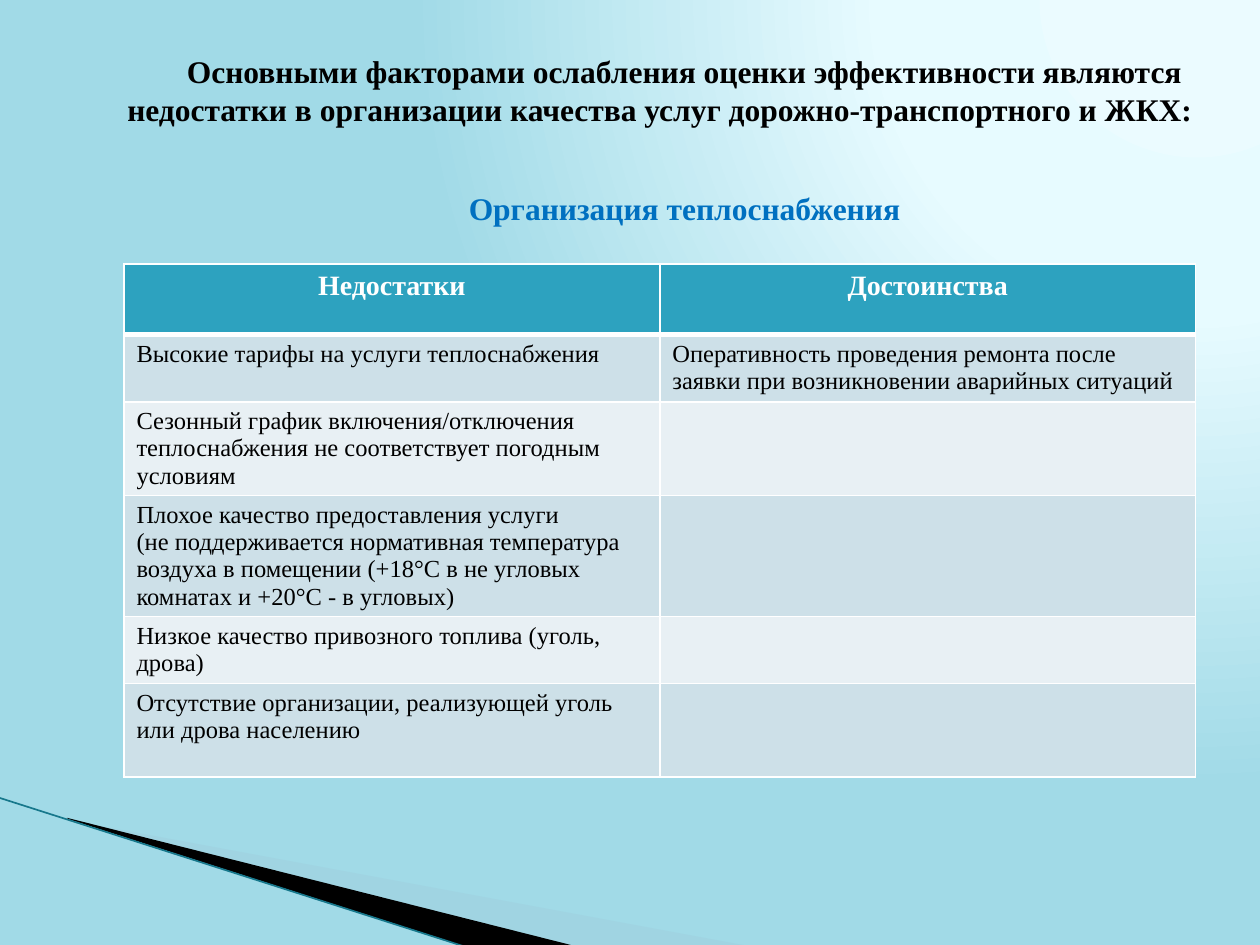
from lxml import etree
from pptx import Presentation
from pptx.dml.color import RGBColor
from pptx.enum.shapes import MSO_CONNECTOR
from pptx.enum.text import MSO_ANCHOR, MSO_AUTO_SIZE, PP_ALIGN
from pptx.oxml import parse_xml
from pptx.oxml.ns import qn
from pptx.util import Pt

STRAIGHT = MSO_CONNECTOR.STRAIGHT
CENTER, LEFT = PP_ALIGN.CENTER, PP_ALIGN.LEFT
FONT = "Times New Roman"
A_NS = 'xmlns:a="http://schemas.openxmlformats.org/drawingml/2006/main"'

# Content: text, colour, space before
HEADINGS = [
    ("Основными факторами ослабления оценки эффективности являются "
     "недостатки в организации качества услуг дорожно-транспортного и ЖКХ:",
     "000000", 0),
    ("Организация теплоснабжения", "0070C0", 35),
]
COLUMNS = ["Недостатки", "Достоинства"]
# Each cell is a list of paragraphs
ROWS = [
    (["Высокие тарифы на услуги теплоснабжения"],
     ["Оперативность проведения ремонта после заявки при возникновении "
      "аварийных ситуаций"]),
    (["Сезонный график включения/отключения теплоснабжения не соответствует "
      "погодным условиям"], []),
    (["Плохое качество предоставления услуги",
      "(не поддерживается нормативная температура воздуха в помещении "
      "(+18°C в не угловых комнатах и +20°C - в угловых)"], []),
    (["Низкое качество привозного топлива (уголь, дрова)"], []),
    (["Отсутствие организации, реализующей уголь или дрова населению"], []),
]
ROW_HEIGHTS = [40.4, 38.3, 53.6, 69.1, 38.2, 53.6]
COLUMN_WIDTH = 306.2
HEADER_FILL, BAND_FILLS = "2DA2BF", ("CDE0E8", "E8F0F4")

# Background gradient and corner wedges: frame, outline, colour, opacity
GRADIENT = [(0, "EBFBFF"), (40, "E7FBFF"), (100, "A1DAE7")]
WEDGES = [
    ((56.2, 393.8, 299.5, 113.8),
     [(39.6, 468.7), (428.4, 540.7), (328.3, 540.7), (39.6, 468)], "A0CBDC", 40),
    ((-4.3, 455.8, 299.5, 66.2),
     [(38.2, 467.3), (329, 540.7), (267.8, 541.4), (38.9, 468)], "000000", 100),
]


def rgb(value):
    return RGBColor.from_string(value)


def add_text(paragraph, text, size, color, bold, align):
    paragraph.alignment = align
    run = paragraph.add_run()
    run.text = text
    run.font.name = FONT
    run.font.size = Pt(size)
    run.font.bold = bold
    run.font.color.rgb = rgb(color)


def paragraph_at(frame, index):
    return frame.add_paragraph() if index else frame.paragraphs[0]


def set_background(slide):
    slide.background.fill.solid()
    stops = "".join(f'<a:gs pos="{pos * 1000}"><a:srgbClr val="{color}"/></a:gs>'
                    for pos, color in GRADIENT)
    gradient = parse_xml(
        f'<a:gradFill {A_NS} rotWithShape="1"><a:gsLst>{stops}</a:gsLst>'
        '<a:path path="circle"><a:fillToRect l="95000" t="-106000" '
        'r="5000" b="206000"/></a:path></a:gradFill>')
    solid = slide.element.find(".//" + qn("p:bgPr")).find(qn("a:solidFill"))
    solid.getparent().replace(solid, gradient)


def set_frame(wedge, frame):
    """Give the wedge its frame; the outline stays and may run past it."""
    left, top, width, height = (Pt(value) for value in frame)
    outline = wedge.element.spPr.find(".//" + qn("a:path"))
    for point in outline.iter(qn("a:pt")):
        point.set("x", str(int(point.get("x")) + wedge.left - left))
        point.set("y", str(int(point.get("y")) + wedge.top - top))
    outline.set("w", str(width))
    outline.set("h", str(height))
    wedge.left, wedge.top, wedge.width, wedge.height = left, top, width, height


def add_wedge(slide, frame, points, color, opacity):
    corners = [(Pt(x), Pt(y)) for x, y in points]
    builder = slide.shapes.build_freeform(*corners[0])
    builder.add_line_segments(corners[1:], close=True)
    wedge = builder.convert_to_shape()
    set_frame(wedge, frame)
    wedge.shadow.inherit = False
    wedge.line.fill.background()
    wedge.fill.solid()
    wedge.fill.fore_color.rgb = rgb(color)
    if opacity < 100:
        tint = wedge.element.spPr.find(".//" + qn("a:srgbClr"))
        etree.SubElement(tint, qn("a:alpha"), val=str(opacity * 1000))


def add_edge(slide):
    edge = slide.shapes.add_connector(
        STRAIGHT, Pt(-0.7), Pt(455.8), Pt(267.1), Pt(541.4))
    edge.line.color.rgb = rgb("17788C")
    edge.line.width = Pt(0.95)
    etree.SubElement(edge.element.spPr, qn("a:effectLst"))


def fill_headings(body):
    body.left, body.top, body.width, body.height = Pt(25.6), Pt(26), Pt(674.8), Pt(447)
    frame = body.text_frame
    frame.auto_size = MSO_AUTO_SIZE.NONE
    frame.vertical_anchor = MSO_ANCHOR.TOP
    for index, (text, color, space) in enumerate(HEADINGS):
        paragraph = paragraph_at(frame, index)
        properties = paragraph._p.get_or_add_pPr()
        properties.set("marL", str(Pt(28.2)))
        properties.set("indent", str(Pt(28.2)))
        etree.SubElement(properties, qn("a:buNone"))
        paragraph.line_spacing = Pt(21.7)
        paragraph.space_before = Pt(space)
        add_text(paragraph, text, 18, color, True, CENTER)


def format_cell(cell, paragraphs, fill, is_header):
    cell.fill.solid()
    cell.fill.fore_color.rgb = rgb(fill)
    for position, side in enumerate(("lnL", "lnR", "lnT", "lnB")):
        width = 3 if is_header and side == "lnB" else 1
        border = parse_xml(
            f'<a:{side} {A_NS} w="{Pt(width)}"><a:solidFill>'
            f'<a:srgbClr val="FFFFFF"/></a:solidFill></a:{side}>')
        cell._tc.get_or_add_tcPr().insert(position, border)
    style = (16, "FFFFFF", True, CENTER) if is_header else (14, "000000", False, LEFT)
    for index, text in enumerate(paragraphs):
        add_text(paragraph_at(cell.text_frame, index), text, *style)


def add_comparison(slide):
    table = slide.shapes.add_table(
        len(ROW_HEIGHTS), len(COLUMNS), Pt(70.8), Pt(150.9),
        Pt(COLUMN_WIDTH * len(COLUMNS)), Pt(sum(ROW_HEIGHTS))).table
    for column in table.columns:
        column.width = Pt(COLUMN_WIDTH)
    for row, height in zip(table.rows, ROW_HEIGHTS):
        row.height = Pt(height)
    for r, contents in enumerate([[[name] for name in COLUMNS], *ROWS]):
        fill = BAND_FILLS[(r - 1) % 2] if r else HEADER_FILL
        for c, paragraphs in enumerate(contents):
            format_cell(table.cell(r, c), paragraphs, fill, r == 0)


def main():
    deck = Presentation()
    deck.slide_width, deck.slide_height = Pt(720), Pt(540)
    slide = deck.slides.add_slide(deck.slide_layouts[1])
    title, body = slide.placeholders
    title.element.getparent().remove(title.element)
    set_background(slide)
    for wedge in WEDGES:
        add_wedge(slide, *wedge)
    add_edge(slide)
    fill_headings(body)
    add_comparison(slide)
    deck.save("out.pptx")


if __name__ == "__main__":
    main()
